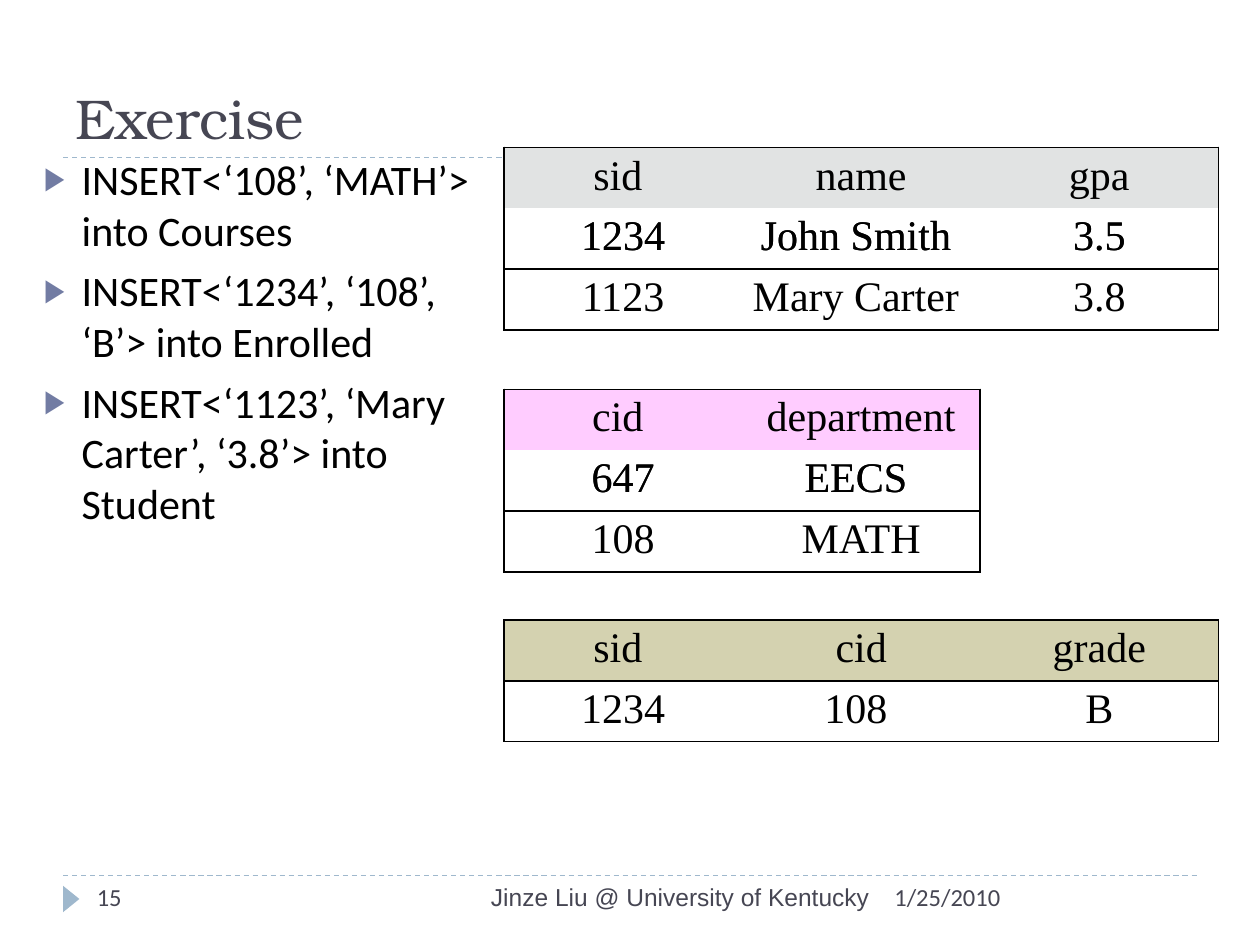
from lxml.etree import SubElement
from pptx import Presentation
from pptx.dml.color import RGBColor
from pptx.enum.dml import MSO_LINE
from pptx.enum.shapes import MSO_CONNECTOR, MSO_SHAPE
from pptx.enum.text import MSO_ANCHOR, PP_ALIGN
from pptx.oxml.ns import qn
from pptx.util import Inches, Pt

INK, BLACK, BLUE, BULLET = "464653", "000000", "9FB8CD", "727CA3"


def color(code):
    return RGBColor.from_string(code)


def write(para, text, size=24, font="Calibri", ink=BLACK, align=None):
    run = para.add_run()
    run.text = text
    run.font.size = Pt(size)
    run.font.name = font
    run.font.color.rgb = color(ink)
    para.alignment = align


def bullet(para):
    para.space_before = Pt(6)
    props = para._p.get_or_add_pPr()
    props.set("marL", str(Inches(0.3)))
    props.set("indent", str(Inches(-0.3)))
    tint = SubElement(props, qn("a:buClr"))
    SubElement(tint, qn("a:srgbClr"), val=BULLET)
    SubElement(props, qn("a:buSzPct"), val="76000")
    SubElement(props, qn("a:buFont"), typeface="Arial")
    SubElement(props, qn("a:buChar"), char="▶")


def border(cell, sides):
    """Draw the named sides in black and clear the others."""
    props = cell._tc.get_or_add_tcPr()
    for spot, side in enumerate("LRTB"):
        line = props.makeelement(qn(f"a:ln{side}"), {"w": str(Pt(1))})
        props.insert(spot, line)
        if side in sides:
            fill = SubElement(line, qn("a:solidFill"))
            SubElement(fill, qn("a:srgbClr"), val=BLACK)
        else:
            SubElement(line, qn("a:noFill"))


class Deck:
    """Holds the table style and the current slide."""
    left, col, row = 4, 1.89, 0.42
    font = "Times New Roman"

    def __init__(self, show):
        self.slide = show.slides.add_slide(show.slide_layouts[5])
        self.shapes = self.slide.shapes

    def title(self, text, x, y, w, h):
        head = self.shapes.title
        head.left, head.top = Inches(x), Inches(y)
        head.width, head.height = Inches(w), Inches(h)
        head.text_frame.vertical_anchor = MSO_ANCHOR.BOTTOM
        write(head.text_frame.paragraphs[0], text, size=32,
              font="TeX Gyre Bonum", ink=INK, align=PP_ALIGN.LEFT)

    def rule(self, y):
        line = self.shapes.add_connector(
            MSO_CONNECTOR.STRAIGHT, Inches(0.5), Inches(y), Inches(9.5), Inches(y))
        line.line.color.rgb = color(BLUE)
        line.line.width = Pt(0.75)
        line.line.dash_style = MSO_LINE.DASH
        SubElement(line._element.spPr, qn("a:effectLst"))

    def marker(self, x, y, w, h):
        mark = self.shapes.add_shape(
            MSO_SHAPE.ISOSCELES_TRIANGLE, Inches(x), Inches(y), Inches(w), Inches(h))
        mark.rotation = 90
        mark.shadow.inherit = False
        mark.fill.solid()
        mark.fill.fore_color.rgb = color(BLUE)
        mark.line.fill.background()

    def box(self, x, y, w, h):
        frame = self.shapes.add_textbox(
            Inches(x), Inches(y), Inches(w), Inches(h)).text_frame
        frame.word_wrap = True
        return frame

    def note(self, text, x, w, **style):
        frame = self.box(x, 6.95, w, 0.4)
        write(frame.paragraphs[0], text, size=14, ink=INK, **style)

    def bullets(self, items, x, y, w, h):
        frame = self.box(x, y, w, h)
        for i, item in enumerate(items):
            para = frame.add_paragraph() if i else frame.paragraphs[0]
            write(para, item)
            bullet(para)

    def table(self, y, fill, rows):
        high, wide = len(rows), len(rows[0])
        grid = self.shapes.add_table(
            high, wide, Inches(self.left), Inches(y),
            Inches(self.col * wide), Inches(self.row * high)).table
        grid.first_row = grid.horz_banding = False
        for r, row in enumerate(rows):
            grid.rows[r].height = Inches(self.row)
            for c, text in enumerate(row):
                cell = grid.cell(r, c)
                cell.margin_top = cell.margin_bottom = Pt(3)
                cell.margin_left = cell.margin_right = Pt(6)
                if r == 0:
                    cell.fill.solid()
                    cell.fill.fore_color.rgb = color(fill)
                else:
                    cell.fill.background()
                write(cell.text_frame.paragraphs[0], text,
                      font=self.font, align=PP_ALIGN.CENTER)
                edges = {"L": c == 0, "R": c == wide - 1,
                         "T": r == 0, "B": r == high - 1}
                border(cell, [side for side, on in edges.items() if on])


def main():
    show = Presentation()
    show.slide_width, show.slide_height = Inches(10), Inches(7.5)
    deck = Deck(show)
    deck.rule(6.95)
    deck.rule(1.25)
    deck.marker(0.46, 7.07, 0.21, 0.13)
    deck.title("Exercise", 0.5, 0.17, 9, 1.08)
    deck.note("1/25/2010", 7, 2.5)
    deck.note("Jinze Liu @ University of Kentucky", 3.17, 3.83,
              font="Arial", align=PP_ALIGN.RIGHT)
    deck.note("15", 0.67, 2.17)
    deck.bullets(["INSERT<‘108’, ‘MATH’> into Courses",
                  "INSERT<‘1234’, ‘108’, ‘B’> into Enrolled",
                  "INSERT<‘1123’, ‘Mary Carter’, ‘3.8’> into Student"],
                 0.25, 1.17, 3.67, 5.75)

    student = (1.17, "E1E3E3", [["sid ", "name", "gpa"],
                                ["1234", "John Smith ", "3.5"],
                                ["1123", "Mary Carter ", "3.8"]])
    course = (3.09, "FFCCFF", [["cid ", "department"],
                               ["647", "EECS "],
                               ["108", "MATH"]])
    enrolled = (4.92, "D4D2B0", [["sid ", "cid", "grade"],
                                 ["1234", "108 ", "B"]])
    # Each relation is stacked in two states: before and after its insert.
    stack = [(student, 2), (course, 3), (enrolled, 2),
             (course, 2), (enrolled, 1), (student, 3)]
    for (y, fill, rows), count in stack:
        deck.table(y, fill, rows[:count])
    show.save("out.pptx")


if __name__ == "__main__":
    main()
